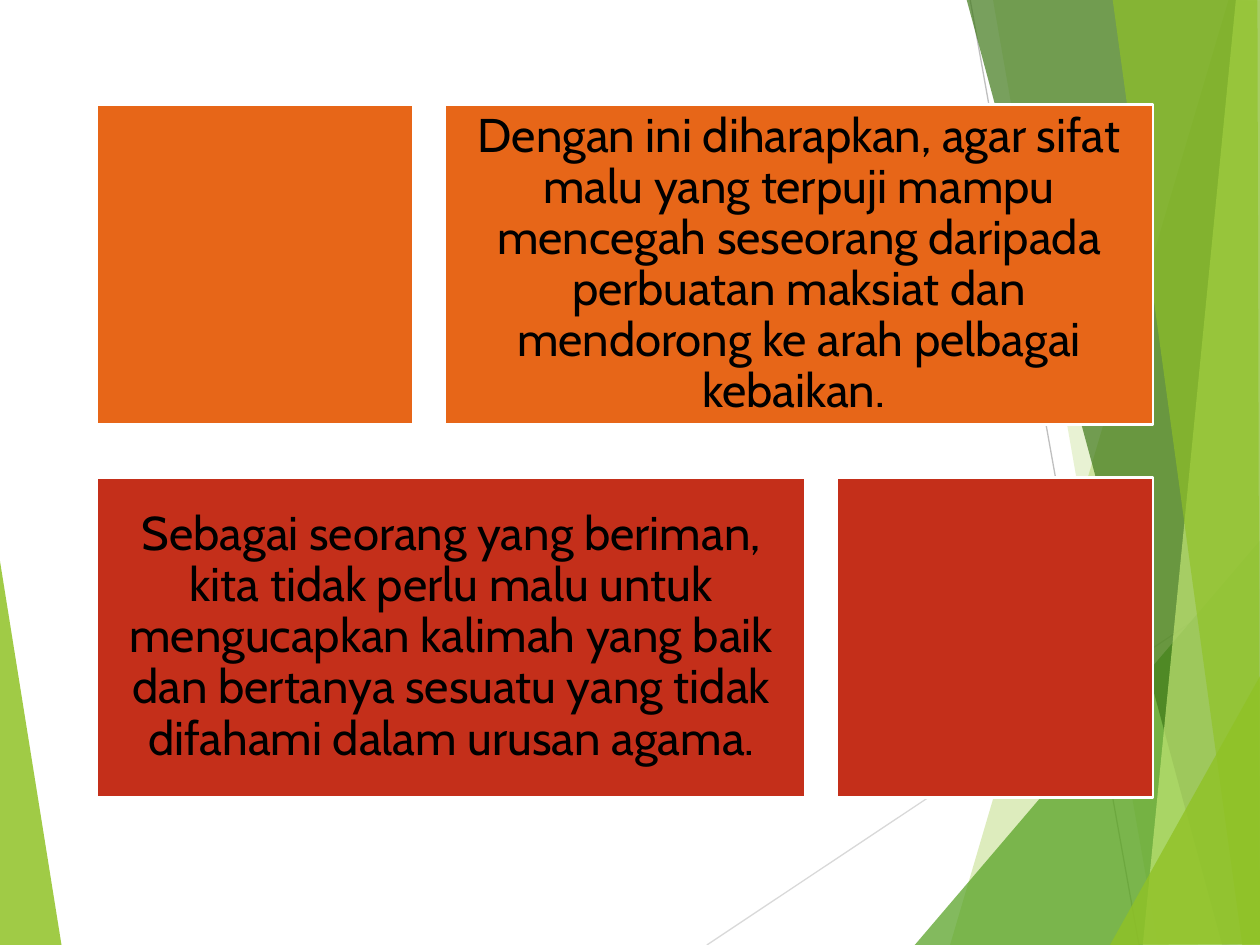
"""Build a slide with two text panels over a faceted green backdrop."""
import pptx
import pptx.dml.color
import pptx.enum.shapes
import pptx.enum.text
import pptx.oxml.ns
import pptx.util
import lxml.etree
from pptx.util import Inches

RGBColor = pptx.dml.color.RGBColor
LIME = RGBColor(0x90, 0xC2, 0x26)
GREEN = RGBColor(0x54, 0xA0, 0x21)
DARK_GREEN = RGBColor(0x3F, 0x78, 0x19)
PALE_LIME = RGBColor(0xC0, 0xE4, 0x74)
LIGHT_GREY = RGBColor(0xD9, 0xD9, 0xD9)
GREY = RGBColor(0xBF, 0xBF, 0xBF)
ORANGE = RGBColor(0xE7, 0x66, 0x18)
RED = RGBColor(0xC4, 0x2F, 0x1A)
WHITE = RGBColor(0xFF, 0xFF, 0xFF)
BLACK = RGBColor(0, 0, 0)

LEFT_FACET = ([(-0.01, 4.39), (0.49, 7.51), (-0.01, 7.5)], LIME, 85)
RAYS = [
    ((5.61, 7.5), (10.01, 4.57), LIGHT_GREY),
    ((7.7, 0), (9.04, 7.5), GREY),
]
RIGHT_FACETS = [
    ([(9.75, 0), (7.54, 7.5), (10.02, 7.51), (10.01, 0.01)], LIME, 30),
    ([(7.88, -0.01), (9.19, 7.5), (10.01, 7.5), (10.01, -0.01)], LIME, 20),
    ([(7.26, 7.5), (10, 4.29), (10.01, 7.5)], GREEN, 72),
    ([(7.67, -0.01), (9.7, 7.5), (10.01, 7.49), (10.01, -0.01)], DARK_GREEN, 70),
    ([(9.81, -0.01), (9.07, 7.5), (10.01, 7.5), (10, -0.01)], PALE_LIME, 70),
    ([(8.83, -0.01), (9.86, 7.5), (10, 7.5), (9.98, -0.01)], LIME, 65),
    ([(8.81, 7.5), (10.01, 5.35), (10.01, 7.49)], LIME, 80),
]

PANEL_LEFT, PANEL_RIGHT = 0.77, 9.15
PANEL_TOP, PANEL_HEIGHT, ROW_STEP = 0.83, 2.54, 2.96
TEXT_WIDTH, BLOCK_WIDTH = 5.62, 2.51
PANELS = [
    ("Dengan ini diharapkan, agar sifat malu yang terpuji mampu mencegah "
     "seseorang daripada perbuatan maksiat dan mendorong ke arah pelbagai kebaikan. ",
     ORANGE, "right"),
    ("Sebagai seorang yang beriman, kita tidak perlu malu untuk mengucapkan "
     "kalimah yang baik dan bertanya sesuatu yang tidak difahami dalam urusan agama.",
     RED, "left"),
]


def add_facet(slide, points, color, opacity):
    corners = [(Inches(x), Inches(y)) for x, y in points]
    builder = slide.shapes.build_freeform(*corners[0], scale=1.0)
    builder.add_line_segments(corners[1:], close=True)
    shape = builder.convert_to_shape()
    shape.shadow.inherit = False
    shape.fill.solid()
    shape.fill.fore_color.rgb = color
    shape.line.fill.background()
    color_element = shape._element.spPr.find(".//" + pptx.oxml.ns.qn("a:srgbClr"))
    alpha = lxml.etree.SubElement(color_element, pptx.oxml.ns.qn("a:alpha"))
    alpha.set("val", str(opacity * 1000))


def add_ray(slide, start, end, color):
    connector = slide.shapes.add_connector(
        pptx.enum.shapes.MSO_CONNECTOR.STRAIGHT,
        *(Inches(value) for value in start + end))
    connector.line.color.rgb = color
    connector.line.width = pptx.util.Pt(0.75)
    lxml.etree.SubElement(connector._element.spPr, pptx.oxml.ns.qn("a:effectLst"))


def add_panel(slide, left, top, width, color):
    shape = slide.shapes.add_shape(
        pptx.enum.shapes.MSO_SHAPE.RECTANGLE,
        Inches(left), Inches(top), Inches(width), Inches(PANEL_HEIGHT))
    shape.shadow.inherit = False
    shape.fill.solid()
    shape.fill.fore_color.rgb = color
    shape.line.color.rgb = WHITE
    shape.line.width = pptx.util.Pt(1.5)
    return shape


def write_text(shape, text, *, size=27, font="Cabin", color=BLACK, inset=0.11):
    frame = shape.text_frame
    frame.word_wrap = True
    frame.vertical_anchor = pptx.enum.text.MSO_ANCHOR.MIDDLE
    frame.margin_left = frame.margin_right = Inches(inset)
    frame.margin_top = frame.margin_bottom = Inches(inset)
    paragraph = frame.paragraphs[0]
    paragraph.alignment = pptx.enum.text.PP_ALIGN.CENTER
    paragraph.line_spacing = 0.9
    run = paragraph.add_run()
    run.text = text
    run.font.size = pptx.util.Pt(size)
    run.font.name = font
    run.font.color.rgb = color


def main():
    presentation = pptx.Presentation()
    presentation.slide_width, presentation.slide_height = Inches(10), Inches(7.5)
    slide = presentation.slides.add_slide(presentation.slide_layouts[6])

    add_facet(slide, *LEFT_FACET)
    for ray in RAYS:
        add_ray(slide, *ray)
    for facet in RIGHT_FACETS:
        add_facet(slide, *facet)

    for row, (text, color, text_side) in enumerate(PANELS):
        top = PANEL_TOP + row * ROW_STEP
        if text_side == "left":
            text_left, block_left = PANEL_LEFT, PANEL_RIGHT - BLOCK_WIDTH
        else:
            text_left, block_left = PANEL_RIGHT - TEXT_WIDTH, PANEL_LEFT
        write_text(add_panel(slide, text_left, top, TEXT_WIDTH, color), text)
        add_panel(slide, block_left, top, BLOCK_WIDTH, color)

    presentation.save("out.pptx")


if __name__ == "__main__":
    main()
